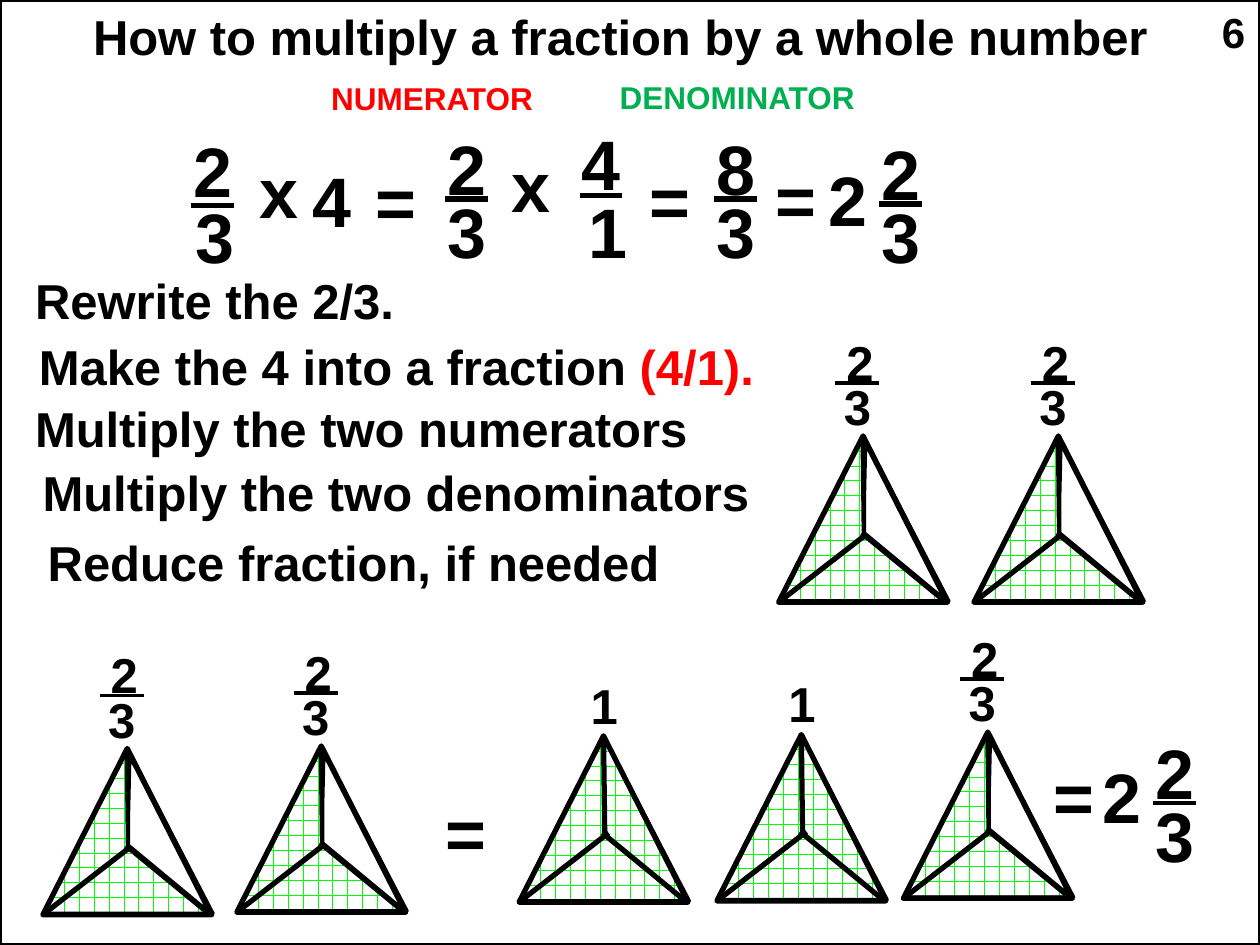
from dataclasses import dataclass

from lxml import etree
from pptx import Presentation
from pptx import util as u
from pptx.dml.color import RGBColor
from pptx.enum import dml, shapes, text
from pptx.oxml import ns

PX = 9144
COLORS = {
    "ink": "000000",
    "paper": "FFFFFF",
    "red": "FF0000",
    "green": "00B050",
    "grid": "00FF00",
}


def color(name):
    return RGBColor.from_string(COLORS[name])


@dataclass
class Board:
    slide: object
    font: str = "Arial"
    heading: int = 28
    large: int = 40

    def label(self, left, top, width, height, runs, size, wrap=True):
        box = self.slide.shapes.add_textbox(
            left * PX, top * PX, width * PX, height * PX)
        frame = box.text_frame
        frame.word_wrap = wrap
        frame.auto_size = text.MSO_AUTO_SIZE.SHAPE_TO_FIT_TEXT
        para = frame.paragraphs[0]
        for words, shade in runs:
            span = para.add_run()
            span.text = words
            span.font.name = self.font
            span.font.size = u.Pt(size)
            span.font.bold = True
            span.font.color.rgb = color(shade)

    def symbol(self, left, top, words, size=None, width=43):
        size = size or self.large
        height = 77 if size == self.large else 56
        self.label(left, top, width, height, [(words, "ink")], size)

    def stroke(self, shape, weight):
        shape.line.color.rgb = color("ink")
        shape.line.width = u.Pt(weight)

    def line(self, start, end, weight=3):
        rule = self.slide.shapes.add_connector(
            shapes.MSO_CONNECTOR.STRAIGHT, *(n * PX for n in start + end))
        self.stroke(rule, weight)
        etree.SubElement(rule._element.spPr, ns.qn("a:effectLst"))

    def outline(self, kind, left, top, width, height, weight):
        shape = self.slide.shapes.add_shape(
            kind, left * PX, top * PX, width * PX, height * PX)
        shape.shadow.inherit = False
        shape.fill.background()
        self.stroke(shape, weight)

    def polygon(self, points, brick=False):
        builder = self.slide.shapes.build_freeform(*points[0], scale=PX)
        builder.add_line_segments(points[1:], close=True)
        shape = builder.convert_to_shape()
        shape.shadow.inherit = False
        if brick:
            shape.fill.patterned()
            shape.fill.pattern = dml.MSO_PATTERN.HORIZONTAL_BRICK
            shape.fill.fore_color.rgb = color("grid")
            shape.fill.back_color.rgb = color("paper")
        else:
            shape.fill.solid()
            shape.fill.fore_color.rgb = color("paper")
        self.stroke(shape, 2)

    def fraction(self, left, top, over, under, bar=63, drop=50, shift=0, weight=3):
        self.symbol(left, top, over)
        self.line((left + 8, top + bar), (left + 42, top + bar), weight)
        self.symbol(left + shift, top + drop, under)

    def small_fraction(self, left, top, over, under):
        self.symbol(left, top, over, self.heading)
        self.line((left + 1, top + 45), (left + 36, top + 45), 2.25)
        self.symbol(left - 2, top + 35, under, self.heading)

    def triangle(self, left, top, whole=False):
        def at(x, y):
            return left + x, top + y

        self.polygon([at(67, 0), at(135, 131), at(0, 131)], brick=True)
        self.outline(shapes.MSO_SHAPE.ISOSCELES_TRIANGLE, left, top, 134, 132, 3)
        self.line(at(67, 0), at(68, 82))
        self.line(at(71, 77), at(0, 132))
        self.line(at(133, 132), at(66, 77))
        if not whole:
            self.polygon([at(69, 6), at(132, 130), at(68, 77), at(68, 50)])


def main():
    deck = Presentation()
    deck.slide_width, deck.slide_height = 1000 * PX, 750 * PX
    board = Board(deck.slides.add_slide(deck.slide_layouts[6]))

    board.outline(shapes.MSO_SHAPE.RECTANGLE, 0, 0, 1000, 750, 2)
    board.label(64, 0, 896, 56,
                [("How to multiply a fraction by a whole number", "ink")], board.heading)
    board.label(960, 0, 40, 50, [("6", "ink")], 24)
    board.label(253, 58, 181, 39, [("NUMERATOR", "red")], 18, wrap=False)
    board.label(482, 57, 207, 39, [("DENOMINATOR", "green")], 18, wrap=False)

    board.fraction(144, 96, "2", "3", bar=67, drop=53, shift=1)
    board.symbol(196, 113, "x", width=77)
    board.symbol(238, 120, "4", width=74)
    board.symbol(288, 121, "=")
    board.fraction(345, 95, "2", "3")
    board.symbol(396, 108, "x", width=77)
    board.fraction(452, 91, "4", "1", bar=64, drop=54, shift=5)
    board.symbol(506, 120, "=")
    board.fraction(559, 95, "8", "3")
    board.symbol(606, 119, "=")
    board.symbol(648, 119, "2")
    board.fraction(690, 99, "2", "3")

    steps = [
        (18, 210, 368, [("Rewrite the 2/3.", "ink")]),
        (21, 262, 603, [("Make the 4 into a fraction ", "ink"), ("(4/1).", "red")]),
        (18, 311, 596, [("Multiply the two numerators", "ink")]),
        (24, 362, 643, [("Multiply the two denominators", "ink")]),
        (28, 418, 581, [("Reduce fraction, if needed", "ink")]),
    ]
    for left, top, width, runs in steps:
        board.label(left, top, width, 56, runs, board.heading)

    for left, top in [(618, 346), (773, 346), (34, 594), (188, 592), (717, 581)]:
        board.small_fraction(left + 44, top - 87, "2", "3")
        board.triangle(left, top)
    for left, top in [(412, 584), (569, 583)]:
        board.symbol(left + 47, top - 53, "1", board.heading)
        board.triangle(left, top, whole=True)

    board.symbol(344, 622, "=")
    board.symbol(826, 593, "=")
    board.symbol(865, 593, "2")
    board.fraction(907, 574, "2", "3", weight=2.25)

    deck.save("out.pptx")


if __name__ == "__main__":
    main()
